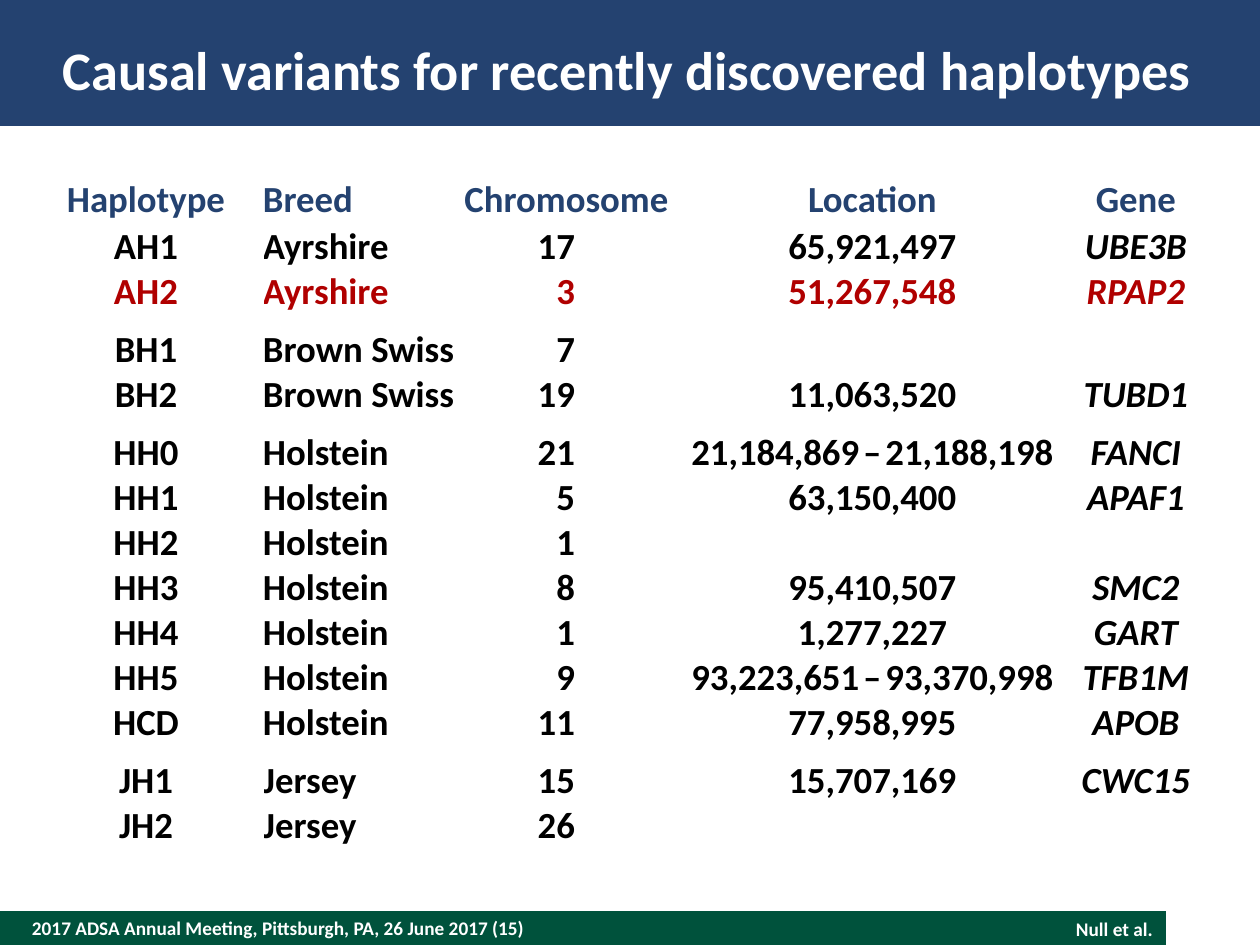
from pptx import Presentation
from pptx.dml.color import RGBColor
from pptx.enum.shapes import MSO_SHAPE
from pptx.enum.text import MSO_ANCHOR as ANCHOR, PP_ALIGN as ALIGN
from pptx.util import Emu, Pt

WHITE = RGBColor(0xFF, 0xFF, 0xFF)
BLACK = RGBColor(0x00, 0x00, 0x00)
NAVY = RGBColor(0x24, 0x42, 0x70)
GREEN = RGBColor(0x00, 0x52, 0x3C)
RED = RGBColor(0xB0, 0x00, 0x00)

DASH = " – "
HEADERS = ["Haplotype", "", "Breed", "Chromosome", "Location", "Gene"]
COL_WIDTHS = [166, 34, 200, 207, 405, 122]
ALIGNS = [ALIGN.CENTER, ALIGN.LEFT, ALIGN.LEFT, ALIGN.RIGHT, ALIGN.CENTER, ALIGN.CENTER]
HEADER_ALIGNS = [ALIGN.CENTER, ALIGN.LEFT, ALIGN.LEFT, ALIGN.CENTER, ALIGN.CENTER, ALIGN.CENTER]
HEADER_HEIGHT, ROW_HEIGHT, GROUP_GAP = 47, 45, 13
CHROMOSOME, GENE = 3, 5
HIGHLIGHTED = "AH2"
BREEDS = {
    "Ayrshire": [("AH1", "17", "65,921,497", "UBE3B"),
                 ("AH2", "3", "51,267,548", "RPAP2")],
    "Brown Swiss": [("BH1", "7", "", ""),
                    ("BH2", "19", "11,063,520", "TUBD1")],
    "Holstein": [("HH0", "21", "21,184,869 – 21,188,198", "FANCI"),
                 ("HH1", "5", "63,150,400", "APAF1"),
                 ("HH2", "1", "", ""),
                 ("HH3", "8", "95,410,507", "SMC2"),
                 ("HH4", "1", "1,277,227", "GART"),
                 ("HH5", "9", "93,223,651 – 93,370,998", "TFB1M"),
                 ("HCD", "11", "77,958,995", "APOB")],
    "Jersey": [("JH1", "15", "15,707,169", "CWC15"),
               ("JH2", "26", "", "")],
}


def px(n):
    return Emu(round(n * 914400 / 126))


class Deck:
    """Holds the slide style and draws each kind of element on the current slide."""

    font = {"name": "Calibri", "bold": True}

    def __init__(self, width, height):
        self.prs = Presentation()
        self.prs.slide_width, self.prs.slide_height = px(width), px(height)
        self.s = self.prs.slides.add_slide(self.prs.slide_layouts[6])

    def run(self, p, text, size, color, italic=False):
        r = p.add_run()
        r.text = text
        for key, value in {**self.font, "size": Pt(size), "italic": italic}.items():
            setattr(r.font, key, value)
        r.font.color.rgb = color

    def margins(self, target, left, top, right, bottom):
        sides = {"left": left, "top": top, "right": right, "bottom": bottom}
        for side, value in sides.items():
            setattr(target, f"margin_{side}", px(value))

    def bar(self, x, y, w, h, color):
        sp = self.s.shapes.add_shape(MSO_SHAPE.RECTANGLE, px(x), px(y), px(w), px(h))
        sp.shadow.inherit = False
        sp.fill.solid()
        sp.fill.fore_color.rgb = color
        sp.line.fill.background()

    def text(self, x, y, w, h, text, size, align=ALIGN.LEFT, anchor=ANCHOR.MIDDLE,
             insets=(0, 0, 0, 0)):
        tf = self.s.shapes.add_textbox(px(x), px(y), px(w), px(h)).text_frame
        tf.word_wrap, tf.vertical_anchor = True, anchor
        self.margins(tf, *insets)
        p = tf.paragraphs[0]
        p.alignment = align
        self.run(p, text, size, WHITE)

    def cell(self, cell, text, color, align, anchor, right=0, bottom=0, italic=False):
        cell.fill.background()
        cell.vertical_anchor = anchor
        self.margins(cell, 0, 0, right, bottom)
        if not text:
            return
        p = cell.text_frame.paragraphs[0]
        p.alignment, p.line_spacing = align, Pt(23.5)
        start, dash, end = text.partition(DASH)
        self.run(p, start, 21, color, italic)
        if dash:
            for part, size in ((" ", 10), (dash.strip(), 21), (" ", 10), (end, 21)):
                self.run(p, part, size, color, italic)

    def table(self, x, y):
        rows = [(name, "", breed, *rest) for breed, group in BREEDS.items()
                for name, *rest in group]
        gaps = [GROUP_GAP if row[2] != after[2] else 0
                for row, after in zip(rows, rows[1:] + rows[-1:])]
        heights = [HEADER_HEIGHT] + [ROW_HEIGHT + gap for gap in gaps]
        tbl = self.s.shapes.add_table(len(heights), len(HEADERS), px(x), px(y),
                                      px(sum(COL_WIDTHS)), px(sum(heights))).table
        tbl.horz_banding = False
        for col, width in zip(tbl.columns, COL_WIDTHS):
            col.width = px(width)
        for row, height in zip(tbl.rows, heights):
            row.height = px(height)
        for c, (header, align) in enumerate(zip(HEADERS, HEADER_ALIGNS)):
            self.cell(tbl.cell(0, c), header, NAVY, align, ANCHOR.BOTTOM, bottom=6)
        for i, (row, gap) in enumerate(zip(rows, gaps), 1):
            color = RED if row[0] == HIGHLIGHTED else BLACK
            for c, (value, align) in enumerate(zip(row, ALIGNS)):
                self.cell(tbl.cell(i, c), value, color, align, ANCHOR.TOP,
                          right=95 if c == CHROMOSOME else 0,
                          bottom=gap, italic=c == GENE)


def main():
    deck = Deck(1260, 945)
    deck.bar(0, 911, 1166, 34, GREEN)
    deck.bar(0, 0, 1260, 126, NAVY)
    deck.text(32, 911, 882, 34,
              "2017 ADSA Annual Meeting, Pittsburgh, PA, 26 June 2017 (15)", 11)
    deck.text(914, 911, 252, 36, "Null et al.", 11, ALIGN.RIGHT, ANCHOR.TOP, (13, 6, 13, 6))
    deck.text(63, 25, 1159, 88, "Causal variants for recently discovered haplotypes", 31)
    deck.table(63, 181)
    deck.prs.save("out.pptx")


if __name__ == "__main__":
    main()
